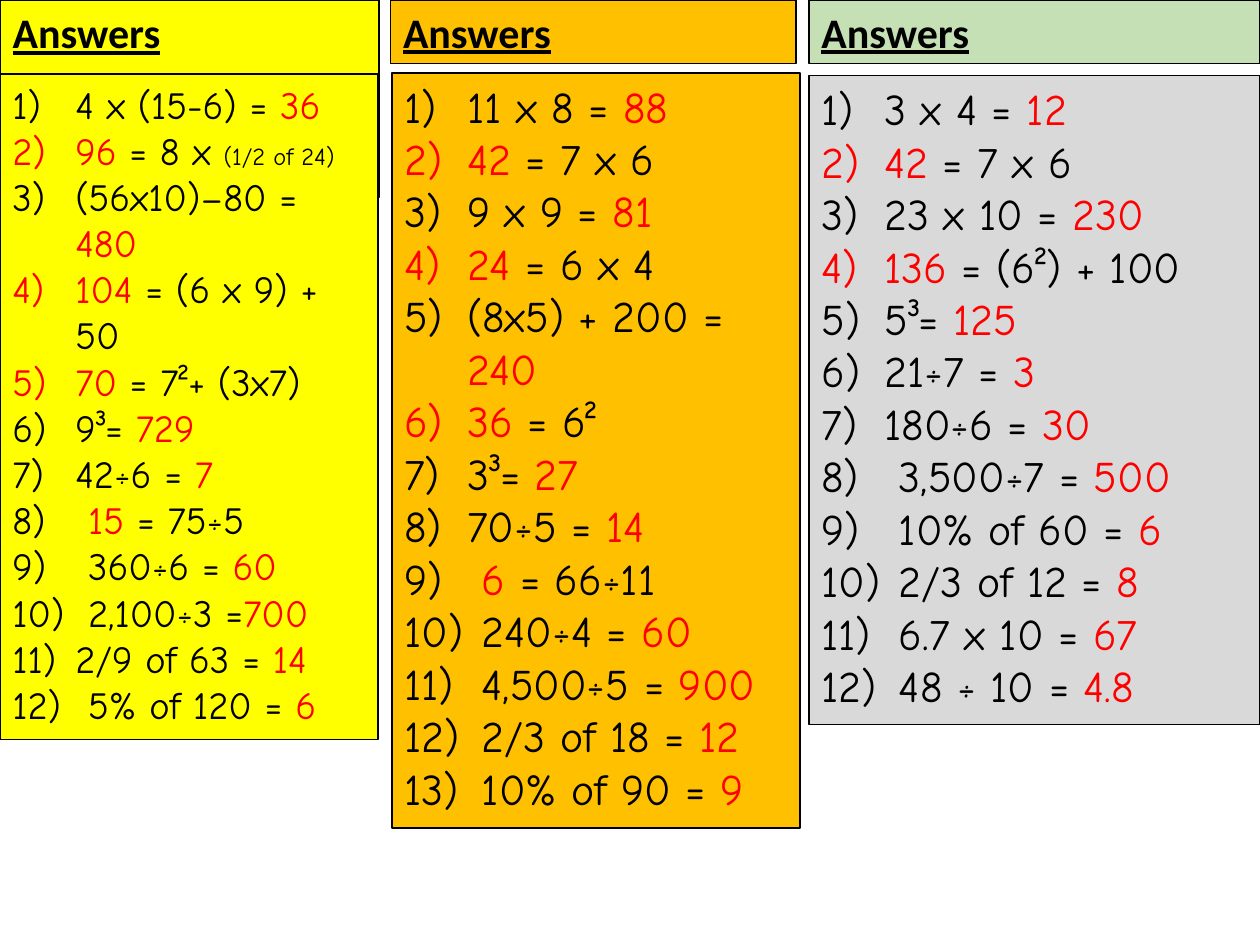
"""Build a slide with three columns of arithmetic answers."""
import pptx
import pptx.dml.color
import pptx.enum.shapes
import pptx.enum.text
import pptx.oxml
import pptx.oxml.ns
import pptx.util

Pt = pptx.util.Pt
BLACK, RED = "000000", "FF0000"

COLUMNS = [
    {
        "heading": (0, 0, 216.72, 36.35), "heading_fill": "FFFF00",
        "answers": (0, 42.48, 216, 380.16), "answers_fill": "FFFF00", "size": 22,
        "sums": [
            "4 x (15-6) = |36", "|96| = 8 x ~(1/2 of 24)", "(56x10)–80 = |480",
            "|104| = (6 x 9) + 50", "|70| = 7²+ (3x7)", "9³= |729", "42÷6 = |7",
            " |15 |= 75÷5", " 360÷6 = |60", " 2,100÷3 =|700", "2/9 of 63 = |14",
            " 5% of 120 = |6",
        ],
    },
    {
        "heading": (223.2, 0, 231.84, 36.35), "heading_fill": "FFC000",
        "answers": (223.92, 41.76, 233.28, 431.28), "answers_fill": "FFC000", "size": 25,
        "sums": [
            "11 x 8 = |88", "|42| = 7 x 6", "9 x 9 = |81", "|24| = 6 x 4",
            "(8x5) + 200 = |240", "|36| = 6²", "3³= |27", "70÷5 = |14", " |6| = 66÷11",
            " 240÷4 = |60", " 4,500÷5 = |900", " 2/3 of 18 = |12", " 10% of 90 = |9",
        ],
    },
    {
        "heading": (462.24, 0, 257.76, 36.35), "heading_fill": "C5E0B4",
        "answers": (462.24, 43.2, 257.76, 370.8), "answers_fill": "D9D9D9", "size": 25,
        "sums": [
            "3 x 4 = |12", "|42| = 7 x 6", "23 x 10 = |230", "|136| = (6²) + 100",
            "5³= |125", "21÷7 = |3", "180÷6 = |30", " 3,500÷7 = |500",
            " 10% of 60 = |6", " 2/3 of 12 = |8", " 6.7 x 10 = |67", " 48 ÷ 10 = |4.8",
        ],
    },
]


def rgb(value):
    """Turn a hex string into a colour."""
    return pptx.dml.color.RGBColor.from_string(value)


def add_text(paragraph, text, *, size, font, color=BLACK, bold=False, underline=False):
    """Append one formatted run to a paragraph."""
    run = paragraph.add_run()
    run.text = text
    run.font.size = Pt(size)
    run.font.name = font
    run.font.bold = bold
    run.font.underline = underline
    run.font.color.rgb = rgb(color)


def number(paragraph, indent):
    """Give a paragraph automatic numbering with a hanging indent."""
    properties = paragraph._p.get_or_add_pPr()
    properties.set("marL", str(Pt(indent)))
    properties.set("indent", str(-Pt(indent)))
    properties.append(pptx.oxml.parse_xml(
        f'<a:buAutoNum {pptx.oxml.ns.nsdecls("a")} type="arabicParenR"/>'))


class AnswerSheet:
    """Hold the style and the current slide."""

    heading_font, answer_font = "Calibri", "Comic Neue"
    heading_size, note_size = 24, 14
    indent = 36

    def __init__(self, slide):
        """Keep the slide to draw on."""
        self.slide = slide

    def panel(self, bounds, fill, placeholder=None):
        """Style a bordered panel and return its text frame."""
        lengths = [Pt(value) for value in bounds]
        if placeholder is None:
            panel = self.slide.shapes.add_shape(
                pptx.enum.shapes.MSO_SHAPE.RECTANGLE, *lengths)
            panel.shadow.inherit = False
        else:
            panel = placeholder
            panel.left, panel.top, panel.width, panel.height = lengths
        panel.fill.solid()
        panel.fill.fore_color.rgb = rgb(fill)
        panel.line.color.rgb = rgb(BLACK)
        panel.line.width = Pt(1)
        frame = panel.text_frame
        frame.word_wrap = True
        frame.auto_size = pptx.enum.text.MSO_AUTO_SIZE.SHAPE_TO_FIT_TEXT
        frame.vertical_anchor = pptx.enum.text.MSO_ANCHOR.TOP
        return frame

    def heading(self, bounds, fill, placeholder=None):
        """Add a column heading."""
        paragraph = self.panel(bounds, fill, placeholder).paragraphs[0]
        paragraph.alignment = pptx.enum.text.PP_ALIGN.LEFT
        add_text(paragraph, "Answers", size=self.heading_size,
                 font=self.heading_font, bold=True, underline=True)

    def answers(self, bounds, fill, sums, size):
        """Add a numbered list; bars enclose red answers, a tilde starts a small note."""
        frame = self.panel(bounds, fill)
        for index, calculation in enumerate(sums):
            paragraph = frame.add_paragraph() if index else frame.paragraphs[0]
            paragraph.alignment = pptx.enum.text.PP_ALIGN.LEFT
            number(paragraph, self.indent)
            working, _, note = calculation.partition("~")
            for position, part in enumerate(working.split("|")):
                if part:
                    add_text(paragraph, part, size=size, font=self.answer_font,
                             color=RED if position % 2 else BLACK)
            if note:
                add_text(paragraph, note, size=self.note_size, font=self.answer_font)


def main():
    """Build and save the presentation."""
    presentation = pptx.Presentation()
    presentation.slide_width, presentation.slide_height = Pt(720), Pt(540)
    slide = presentation.slides.add_slide(presentation.slide_layouts[5])
    sheet = AnswerSheet(slide)
    for index, column in enumerate(COLUMNS):
        title = None if index else slide.shapes.title
        sheet.heading(column["heading"], column["heading_fill"], title)
        sheet.answers(column["answers"], column["answers_fill"],
                      column["sums"], column["size"])
    presentation.save("out.pptx")


if __name__ == "__main__":
    main()
